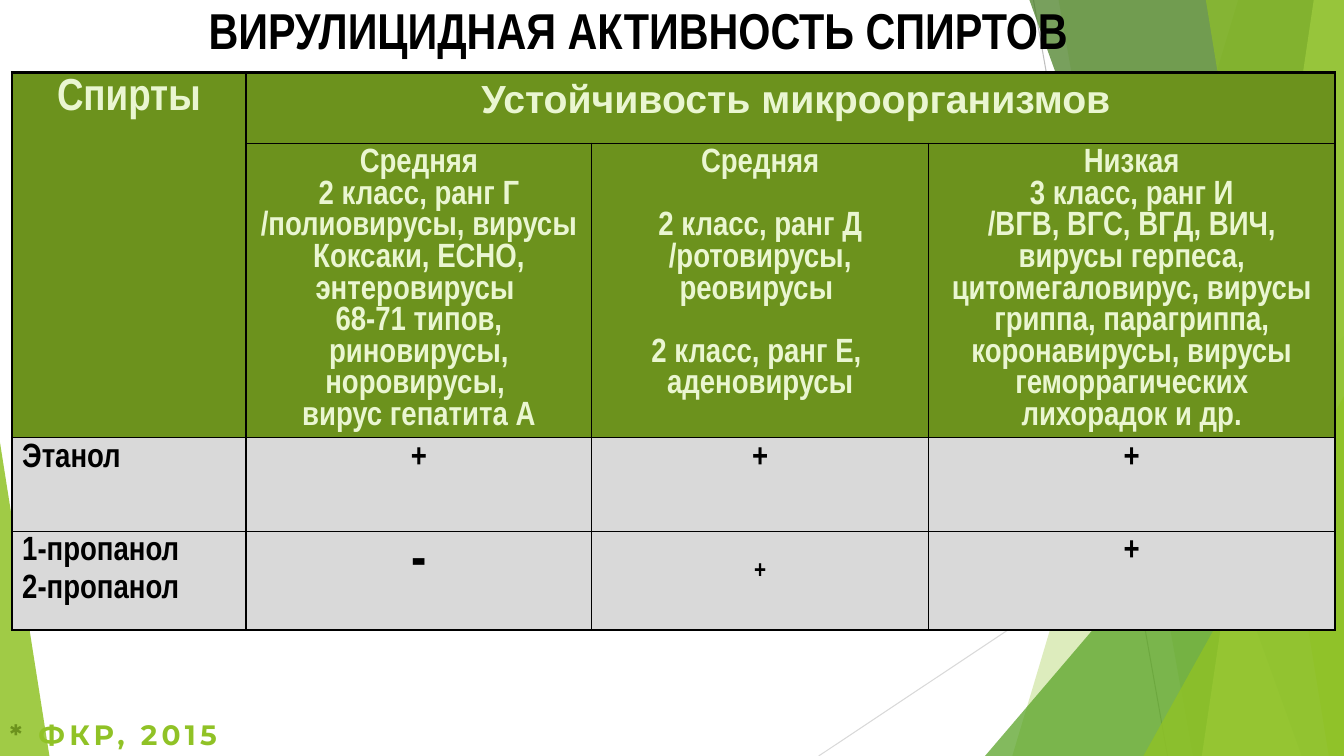
from lxml import etree
from pptx import Presentation
from pptx.dml.color import RGBColor
from pptx.enum.shapes import MSO_CONNECTOR, MSO_SHAPE
from pptx.enum.text import MSO_ANCHOR, PP_ALIGN
from pptx.oxml.ns import qn
from pptx.util import Inches, Pt

STRAIGHT = MSO_CONNECTOR.STRAIGHT
TRIANGLE = MSO_SHAPE.ISOSCELES_TRIANGLE
MIDDLE = MSO_ANCHOR.MIDDLE
LEFT, CENTER = PP_ALIGN.LEFT, PP_ALIGN.CENTER

WIDTH, HEIGHT = 13.33, 7.5
NARROW, ARIAL, MONTSERRAT = "Arial Narrow", "Arial", "Montserrat"
BLACK, GREEN, OLIVE = "000000", "90C226", "6C921D"
PALE, GREY = "EAF6D1", "D9D9D9"
BLANK_LINE = 22.6  # height in points of one 24 pt line


def color(hex_string):
    return RGBColor.from_string(hex_string)


def solid_line(parent, tag, index, hex_string, points):
    line = etree.Element(qn(tag), w=str(int(Pt(points))))
    fill = etree.SubElement(line, qn("a:solidFill"))
    etree.SubElement(fill, qn("a:srgbClr"), val=hex_string)
    parent.insert(index, line)


class SlideBuilder:
    def __init__(self, slide):
        self.slide = slide

    def line(self, start, end, hex_string):
        points = [Inches(value) for value in (*start, *end)]
        connector = self.slide.shapes.add_connector(STRAIGHT, *points)
        connector.line.color.rgb = color(hex_string)
        connector.line.width = Pt(0.75)
        etree.SubElement(connector._element.spPr, qn("a:effectLst"))

    def paint(self, shape, hex_string, opacity):
        shape.shadow.inherit = False
        shape.line.fill.background()
        shape.fill.solid()
        shape.fill.fore_color.rgb = color(hex_string)
        fill_color = shape._element.spPr.find(".//" + qn("a:srgbClr"))
        etree.SubElement(fill_color, qn("a:alpha"), val=str(opacity * 1000))

    def ribbon(self, top_left, bottom_left, hex_string, opacity):
        """Band from a slanted left edge to the right side of the slide."""
        corners = [(WIDTH, 0), (WIDTH, HEIGHT), (bottom_left, HEIGHT)]
        builder = self.slide.shapes.build_freeform(Inches(top_left), 0)
        builder.add_line_segments([(Inches(x), Inches(y)) for x, y in corners])
        self.paint(builder.convert_to_shape(), hex_string, opacity)

    def triangle(self, left, top, width, apex, hex_string, opacity):
        shape = self.slide.shapes.add_shape(
            TRIANGLE, Inches(left), Inches(top), Inches(width), Inches(HEIGHT - top))
        shape.adjustments[0] = apex
        self.paint(shape, hex_string, opacity)

    def font(self, target, size, name, hex_string):
        target.font.size = Pt(size)
        target.font.name = name
        target.font.bold = True
        target.font.color.rgb = color(hex_string)

    def text_box(self, left, top, width, height):
        box = self.slide.shapes.add_textbox(
            Inches(left), Inches(top), Inches(width), Inches(height))
        box.text_frame.word_wrap = True
        box.text_frame.vertical_anchor = MIDDLE
        return box.text_frame.paragraphs[0]

    def table(self, left, top, columns, rows):
        frame = self.slide.shapes.add_table(
            len(rows), len(columns), Inches(left), Inches(top),
            Inches(sum(columns)), Inches(sum(rows)))
        table = frame.table
        table.first_row = table.horz_banding = False
        for column, width in zip(table.columns, columns):
            column.width = Inches(width)
        for row, height in zip(table.rows, rows):
            row.height = Inches(height)
        return table

    def cell(self, cell, lines, size=24, name=NARROW, alignment=CENTER,
             hex_string=BLACK, gaps=None):
        """Write lines; gaps maps a line index to the points before it."""
        cell.text = "\n".join(lines)
        for index, paragraph in enumerate(cell.text_frame.paragraphs):
            paragraph.alignment = alignment
            paragraph.space_before = Pt((gaps or {}).get(index, 0))
            self.font(paragraph, size, name, hex_string)

    def frame_cells(self, table, header_rows):
        """Fill cells, with a thick outer border and thin inner ones."""
        last_row, last_column = len(table.rows) - 1, len(table.columns) - 1
        for row in range(last_row + 1):
            for column in range(last_column + 1):
                cell = table.cell(row, column)
                cell.fill.solid()
                cell.fill.fore_color.rgb = color(OLIVE if row < header_rows else GREY)
                right = column + (cell.span_width if cell.is_merge_origin else 1) - 1
                edges = (("a:lnL", column == 0), ("a:lnR", right == last_column),
                         ("a:lnT", row == 0), ("a:lnB", row == last_row))
                for index, (tag, outer) in enumerate(edges):
                    solid_line(cell._tc.get_or_add_tcPr(), tag, index, BLACK,
                               2.25 if outer else 1)


def main():
    presentation = Presentation()
    presentation.slide_width = Inches(WIDTH)
    presentation.slide_height = Inches(HEIGHT)
    builder = SlideBuilder(presentation.slides.add_slide(presentation.slide_layouts[6]))

    # Green ribbons in the background
    builder.line((10.25, 0), (11.58, HEIGHT), "BFBFBF")
    builder.line((WIDTH, 4.03), (8.12, HEIGHT), GREY)
    builder.ribbon(12.28, 10.04, GREEN, 30)
    builder.ribbon(10.5, 11.83, GREEN, 20)
    builder.triangle(9.77, 3.33, 3.56, 1, "54A021", 72)
    builder.ribbon(10.21, 12.91, "3F7819", 70)
    builder.ribbon(13.03, 11.92, "C0E474", 70)
    builder.ribbon(11.96, 13.18, GREEN, 65)
    builder.triangle(11.34, 3.93, 1.99, 1, GREEN, 80)
    builder.triangle(0, 4.39, 0.49, 0, GREEN, 85)

    # Table header
    table = builder.table(0.12, 0.72, [2.32, 3.43, 3.34, 4.03], [0.7, 2.92, 0.93, 0.98])
    table.cell(0, 0).merge(table.cell(1, 0))
    table.cell(0, 1).merge(table.cell(0, 3))
    builder.cell(table.cell(0, 0), ["Спирты"], 32, hex_string=PALE)
    builder.cell(table.cell(0, 1), [" Устойчивость микроорганизмов"], 28, ARIAL,
                 hex_string=PALE)
    resistance = [
        (["Средняя", "2 класс, ранг Г",
          "/полиовирусы, вирусы Коксаки, ECHO, энтеровирусы ",
          "68-71 типов, риновирусы, норовирусы, ", "вирус гепатита А"], {}),
        (["Средняя", "2 класс, ранг Д", "/ротовирусы, реовирусы ",
          "2 класс, ранг Е, ", "аденовирусы"], {1: BLANK_LINE, 3: BLANK_LINE}),
        (["Низкая", "3 класс, ранг И",
          "/ВГВ, ВГС, ВГД, ВИЧ, вирусы герпеса, цитомегаловирус, вирусы гриппа, "
          "парагриппа, коронавирусы, вирусы геморрагических лихорадок и др."], {}),
    ]
    for column, (lines, gaps) in enumerate(resistance, start=1):
        builder.cell(table.cell(1, column), lines, hex_string=PALE, gaps=gaps)

    # Table body: names of the alcohols, then (sign, size) for each column
    alcohols = [
        (["Этанол"], [("+", 24), ("+", 24), ("+", 24)]),
        (["1-пропанол", "2-пропанол"], [("-", 40), ("+", 18), ("+", 24)]),
    ]
    for row, (names, signs) in enumerate(alcohols, start=2):
        builder.cell(table.cell(row, 0), names, alignment=LEFT, gaps={1: 4.5})
        for column, (sign, size) in enumerate(signs, start=1):
            builder.cell(table.cell(row, column), [sign], size)
    table.cell(3, 2).margin_top = Inches(0.29)
    builder.frame_cells(table, header_rows=2)

    # Title
    title = builder.text_box(1.97, -0.06, 9.4, 0.71)
    title.text = "ВИРУЛИЦИДНАЯ АКТИВНОСТЬ СПИРТОВ"
    builder.font(title, 36, NARROW, BLACK)

    # Footnote with spaced, outlined letters
    footnote = builder.text_box(0, 7.06, 5.39, 0.44)
    for text, hex_string in (("* ", OLIVE), ("ФКР, 2015", GREEN)):
        run = footnote.add_run()
        run.text = text
        builder.font(run, 20, MONTSERRAT, hex_string)
        properties = run._r.get_or_add_rPr()
        properties.set("spc", "300")
        solid_line(properties, "a:ln", 0, "F7FAF4", 0.9)

    presentation.save("out.pptx")


if __name__ == "__main__":
    main()
